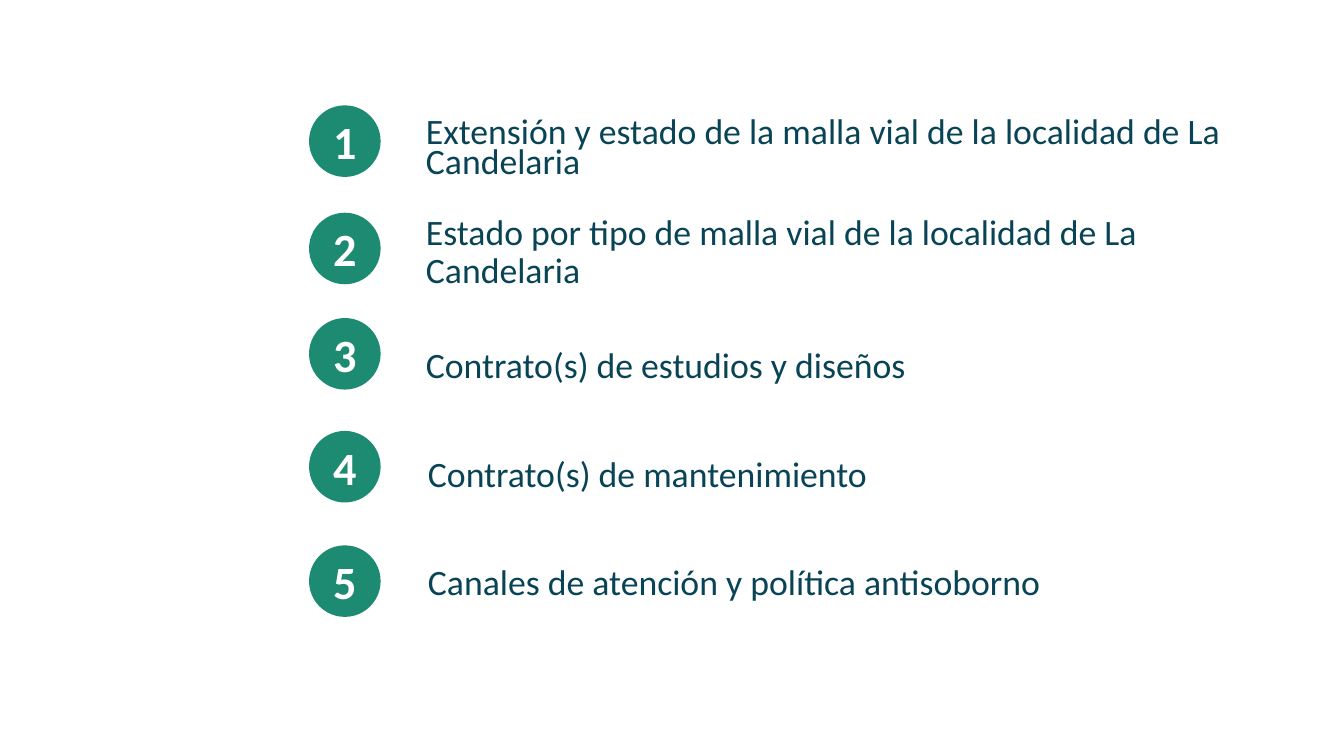
from pptx import Presentation
from pptx.dml.color import RGBColor
from pptx.enum.shapes import MSO_SHAPE as Shape
from pptx.enum.text import MSO_ANCHOR as Anchor, PP_ALIGN as Align
from pptx.util import Pt

WIDE, HIGH = 1919.52, 1080
GREEN, NAVY, WHITE = "1D8A72", "094456", "FFFFFF"
FONT = "Calibri"
DOT_LEFT, DOT = 441.36, 102.24

# dot top, then text box left, top, width, height, line spacing, top inset
TOPICS = [
    ("Extensión y estado de la malla vial de la localidad de La Candelaria",
     150.5, (601.2, 163.44, 1207.44, 102.24), 0.7, 3.6),
    ("Estado por tipo de malla vial de la localidad de La Candelaria",
     303.84, (601.2, 293.76, 1207.44, 134.64), 0.9, 3.6),
    ("Contrato(s) de estudios y diseños",
     454.32, (601.2, 457.92, 1235.52, 106.56), 0.7, 38),
    ("Contrato(s) de mantenimiento",
     615.6, (604.08, 615.6, 1207.44, 102.24), 0.7, 36),
    ("Canales de atención y política antisoborno",
     779.04, (604.08, 782.64, 1207.44, 102.24), 0.9, 3.6),
]


def color(code):
    return RGBColor.from_string(code)


def write(shape, text, size, tint, bold=False):
    frame = shape.text_frame
    frame.word_wrap = True
    frame.vertical_anchor = Anchor.MIDDLE
    para = frame.paragraphs[0]
    para.text = text
    font = para.font
    font.name, font.size, font.bold = FONT, Pt(size), bold
    font.color.rgb = color(tint)
    return para


def add_dot(slide, num, top):
    dot = slide.shapes.add_shape(
        Shape.OVAL, Pt(DOT_LEFT), Pt(top), Pt(DOT), Pt(DOT))
    dot.shadow.inherit = False
    dot.fill.solid()
    dot.fill.fore_color.rgb = color(GREEN)
    dot.line.fill.background()
    write(dot, str(num), 66, WHITE, True).alignment = Align.CENTER


def add_topic(slide, text, area, space, inset):
    box = slide.shapes.add_textbox(*map(Pt, area))
    write(box, text, 51, NAVY).line_spacing = space
    box.text_frame.margin_top = Pt(inset)


def main():
    """Build the numbered agenda slide."""
    deck = Presentation()
    deck.slide_width, deck.slide_height = Pt(WIDE), Pt(HIGH)
    slide = deck.slides.add_slide(deck.slide_layouts[6])
    for num, (text, top, area, space, inset) in enumerate(TOPICS, 1):
        add_dot(slide, num, top)
        add_topic(slide, text, area, space, inset)
    deck.save("out.pptx")


if __name__ == "__main__":
    main()
